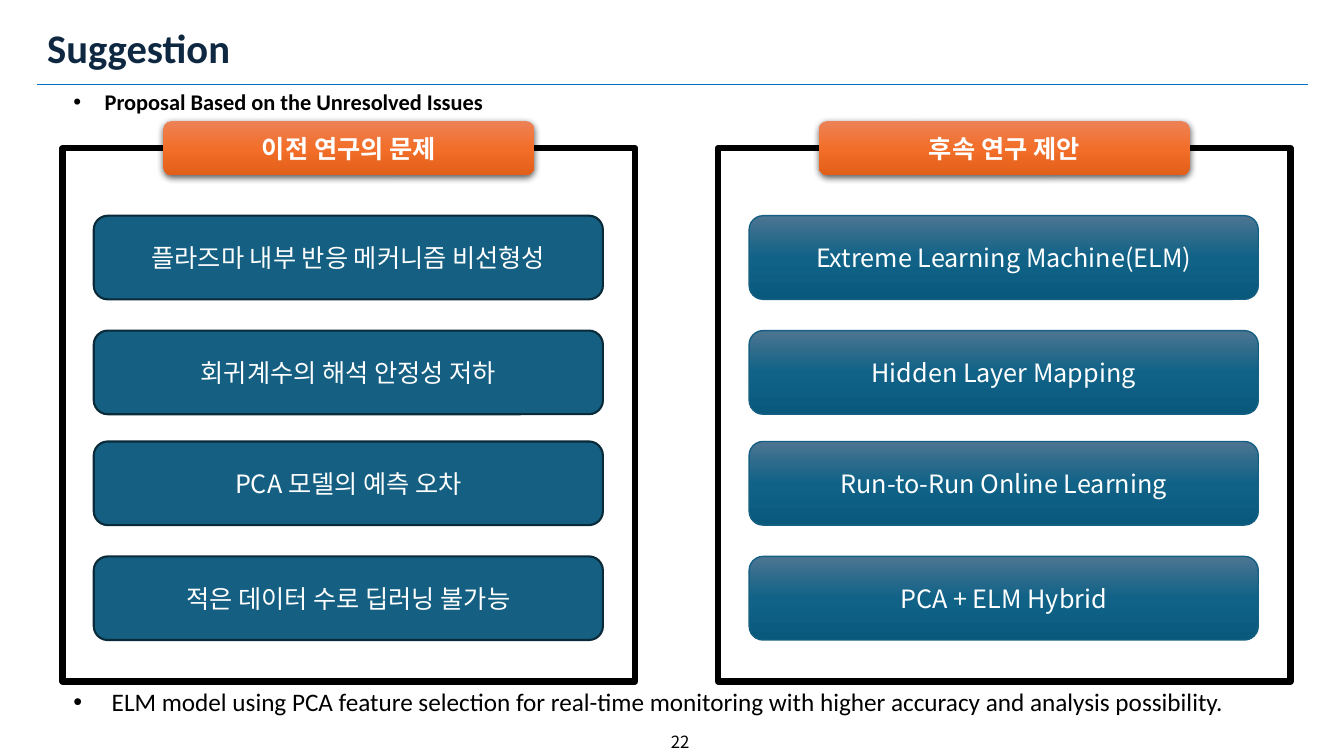
from dataclasses import dataclass

from lxml.etree import SubElement
from pptx import Presentation
from pptx.dml.color import RGBColor
from pptx.enum.shapes import MSO_CONNECTOR, MSO_SHAPE
from pptx.enum.text import MSO_ANCHOR, MSO_AUTO_SIZE, PP_ALIGN
from pptx.oxml.ns import qn
from pptx.shapes.autoshape import Shape
from pptx.slide import Slide
from pptx.util import Inches, Pt


@dataclass(frozen=True)
class Theme:
    latin: str = "Calibri"
    asian: str = "Noto Sans CJK KR"
    black: str = "000000"
    white: str = "FFFFFF"
    navy: str = "0E2841"
    rule: str = "0070C0"
    teal: str = "156082"
    edge: str = "092A39"
    orange: tuple[str, ...] = ("ED8257", "F26E29", "E25F1A")
    ocean: tuple[str, ...] = ("4C7591", "106287", "09597D")
    title: int = 29
    body: int = 18
    lead: int = 16
    small: int = 12


@dataclass(frozen=True)
class Box:
    left: float
    top: float
    width: float
    height: float


@dataclass(frozen=True)
class Panel:
    left: float
    head: str
    items: tuple[str, ...]
    fill: tuple[str, ...]
    line: str
    weight: float


THEME = Theme()
TOPS = (2.14, 3.28, 4.38, 5.52)
PANELS = (
    Panel(0.62, "이전 연구의 문제",
          ("플라즈마 내부 반응 메커니즘 비선형성", "회귀계수의 해석 안정성 저하",
           "PCA 모델의 예측 오차", "적은 데이터 수로 딥러닝 불가능"),
          (THEME.teal,), THEME.edge, 1.5),
    Panel(7.12, "후속 연구 제안",
          ("Extreme Learning Machine(ELM)", "Hidden Layer Mapping",
           "Run-to-Run Online Learning", "PCA + ELM Hybrid"),
          THEME.ocean, THEME.teal, 1),
)


def write(shape: Shape, text: str, *, size: int = THEME.body, font: str = THEME.asian,
          color: str = THEME.white, bold: bool = False, align: PP_ALIGN = PP_ALIGN.CENTER,
          anchor: MSO_ANCHOR = MSO_ANCHOR.MIDDLE, indent: float = 0,
          space: float | None = None, grow: bool = False) -> None:
    frame = shape.text_frame
    frame.word_wrap = True
    frame.vertical_anchor = anchor
    if grow:
        frame.auto_size = MSO_AUTO_SIZE.SHAPE_TO_FIT_TEXT
    para = frame.paragraphs[0]
    para.alignment = align
    if space:
        para.line_spacing = space
    if indent:
        props = para._p.get_or_add_pPr()
        props.set("marL", str(Inches(indent)))
        props.set("indent", str(-Inches(indent)))
        SubElement(props, qn("a:buFont"), typeface="Arial")
        SubElement(props, qn("a:buChar"), char="•")
    run = para.add_run()
    run.text = text
    run.font.size = Pt(size)
    run.font.bold = bold
    run.font.color.rgb = RGBColor.from_string(color)
    run.font.name = font
    SubElement(run._r.get_or_add_rPr(), qn("a:ea"), typeface=THEME.asian)


def label(slide: Slide, box: Box) -> Shape:
    return slide.shapes.add_textbox(Inches(box.left), Inches(box.top),
                                    Inches(box.width), Inches(box.height))


def paint(shape: Shape, colors: tuple[str, ...]) -> None:
    if len(colors) == 1:
        shape.fill.solid()
        shape.fill.fore_color.rgb = RGBColor.from_string(colors[0])
        return
    shape.fill.gradient()
    shape.fill.gradient_angle = 270
    stops = shape._element.spPr.find(qn("a:gradFill")).find(qn("a:gsLst"))
    for stop in list(stops):
        stops.remove(stop)
    for i, color in enumerate(colors):
        stop = SubElement(stops, qn("a:gs"), pos=str(100000 * i // (len(colors) - 1)))
        SubElement(stop, qn("a:srgbClr"), val=color)


def block(slide: Slide, kind: MSO_SHAPE, box: Box, fill: tuple[str, ...],
          line: str = "", weight: float = 0) -> Shape:
    shape = slide.shapes.add_shape(kind, Inches(box.left), Inches(box.top),
                                   Inches(box.width), Inches(box.height))
    shape.shadow.inherit = False
    paint(shape, fill)
    if line:
        shape.line.color.rgb = RGBColor.from_string(line)
        shape.line.width = Pt(weight)
    else:
        shape.line.fill.background()
    return shape


def shade(shape: Shape) -> None:
    effects = shape._element.spPr.find(qn("a:effectLst"))
    outer = SubElement(effects, qn("a:outerShdw"), blurRad=str(Pt(4.5)),
                       dist=str(Pt(1.5)), dir="5400000", algn="ctr", rotWithShape="0")
    color = SubElement(outer, qn("a:srgbClr"), val=THEME.black)
    SubElement(color, qn("a:alpha"), val="63000")


def draw(slide: Slide, panel: Panel) -> None:
    block(slide, MSO_SHAPE.RECTANGLE, Box(panel.left, 1.47, 5.68, 5.29),
          (THEME.white,), THEME.black, 4.5)
    head = block(slide, MSO_SHAPE.ROUNDED_RECTANGLE,
                 Box(panel.left + 1, 1.2, 3.68, 0.54), THEME.orange)
    shade(head)
    write(head, panel.head, bold=True)
    for top, item in zip(TOPS, panel.items):
        card = block(slide, MSO_SHAPE.ROUNDED_RECTANGLE,
                     Box(panel.left + 0.31, top, 5.05, 0.83),
                     panel.fill, panel.line, panel.weight)
        write(card, item)


def main() -> None:
    deck = Presentation()
    deck.slide_width = Inches(13.33)
    deck.slide_height = Inches(7.5)
    slide = deck.slides.add_slide(deck.slide_layouts[6])

    rule = slide.shapes.add_connector(MSO_CONNECTOR.STRAIGHT, Inches(0.37), Inches(0.84),
                                      Inches(12.97), Inches(0.84))
    rule.line.color.rgb = RGBColor.from_string(THEME.rule)
    rule.line.width = Pt(1)
    SubElement(rule._element.spPr, qn("a:effectLst"))

    write(label(slide, Box(5.25, 7.21, 2.99, 0.29)), "22",
          size=THEME.small, color=THEME.black)
    write(label(slide, Box(0.37, 0.16, 12.6, 0.68)), "Suggestion", size=THEME.title,
          font=THEME.latin, color=THEME.navy, bold=True, align=PP_ALIGN.LEFT, space=0.9)
    for panel in PANELS:
        draw(slide, panel)
    write(label(slide, Box(0.63, 0.83, 6.67, 0.37)),
          "Proposal Based on the Unresolved Issues", size=THEME.lead, font=THEME.latin,
          color=THEME.black, bold=True, align=PP_ALIGN.LEFT, anchor=MSO_ANCHOR.TOP,
          indent=0.31, grow=True)
    write(label(slide, Box(0.63, 6.76, 12.17, 0.4)),
          "ELM model using PCA feature selection for real-time monitoring "
          "with higher accuracy and analysis possibility.",
          font=THEME.latin, color=THEME.black, align=PP_ALIGN.LEFT,
          anchor=MSO_ANCHOR.TOP, indent=0.38, grow=True)
    deck.save("out.pptx")


if __name__ == "__main__":
    main()
